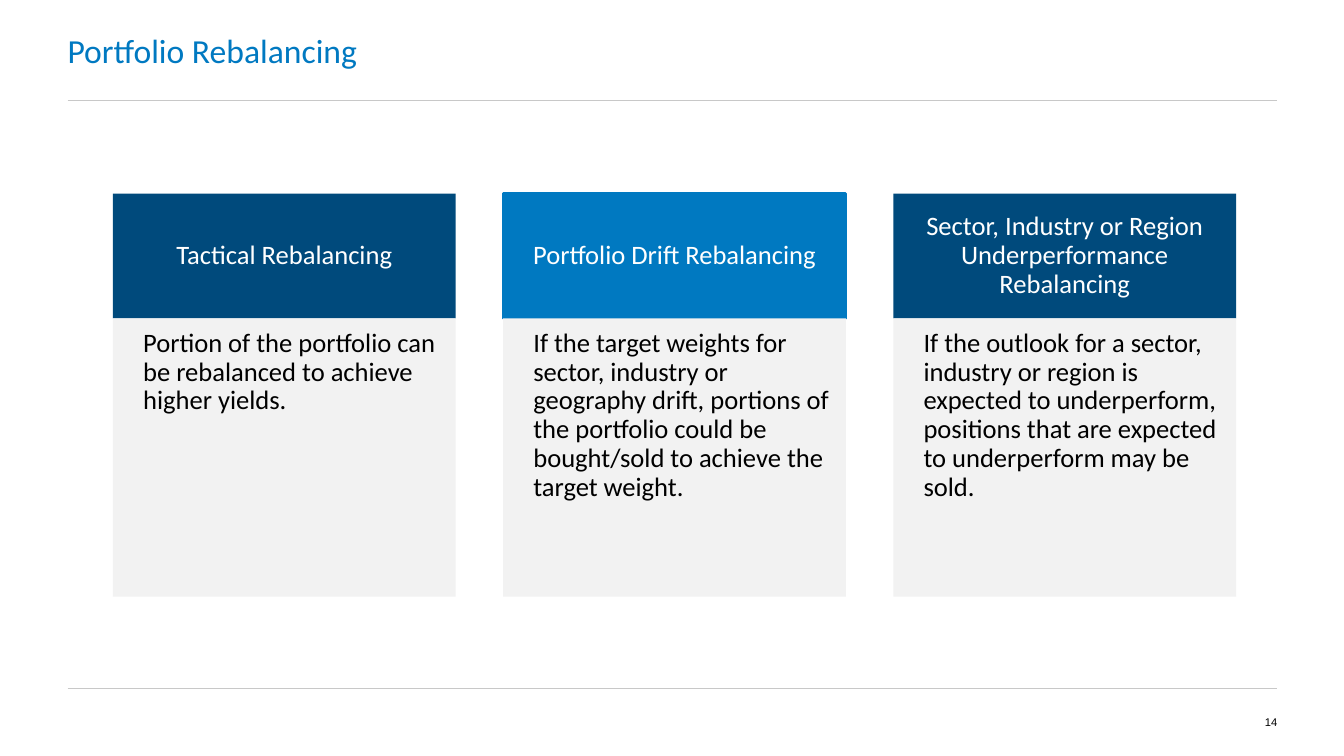
import pptx
import pptx.util
import pptx.dml.color
import pptx.enum.shapes
import pptx.enum.text
import pptx.oxml

PX = 9144
ALIGN = pptx.enum.text.PP_ALIGN
ANCHOR = pptx.enum.text.MSO_ANCHOR
NAVY, BLUE, PALE, GREY = "004A7C", "0079C1", "F2F2F2", "C8C8C8"
BLACK, WHITE = "000000", "FFFFFF"
LEFT, STEP, WIDE = 112, 387, 340
TOP, HEAD, BODY = 192, 124, 276
CARDS = [
    ("Tactical Rebalancing", NAVY, None,
     "Portion of the portfolio can be rebalanced to achieve higher yields."),
    ("Portfolio Drift Rebalancing", BLUE, BLUE,
     "If the target weights for sector, industry or geography drift, portions "
     "of the portfolio could be bought/sold to achieve the target weight."),
    ("Sector, Industry or Region Underperformance Rebalancing", NAVY, None,
     "If the outlook for a sector, industry or region is expected to "
     "underperform, positions that are expected to underperform may be sold."),
]


def px(*nums):
    return [pptx.util.Emu(num * PX) for num in nums]


def paint(part, color):
    part.solid()
    part.fore_color.rgb = pptx.dml.color.RGBColor.from_string(color)


def write(shape, text, size, color, align=ALIGN.LEFT, anchor=ANCHOR.MIDDLE,
          inset=(0, 0, 0, 0), face="Calibri"):
    frame = shape.text_frame
    frame.text = text
    frame.word_wrap = True
    frame.auto_size = pptx.enum.text.MSO_AUTO_SIZE.NONE
    frame.vertical_anchor = anchor
    (frame.margin_left, frame.margin_top,
     frame.margin_right, frame.margin_bottom) = px(*inset)
    para = frame.paragraphs[0]
    para.alignment = align
    para.font.name = face
    para.font.size = pptx.util.Pt(size)
    paint(para.font.fill, color)
    return para


def add_rule(slide, y):
    kind = pptx.enum.shapes.MSO_CONNECTOR.STRAIGHT
    rule = slide.shapes.add_connector(kind, *px(67, y, 1267, y))
    rule.line.width = pptx.util.Pt(0.75)
    paint(rule.line.fill, GREY)
    props = rule._element.spPr
    props.append(pptx.oxml.parse_xml(
        '<a:effectLst xmlns:a='
        '"http://schemas.openxmlformats.org/drawingml/2006/main"/>'))


def add_box(slide, x, y, high, fill, edge=None):
    kind = pptx.enum.shapes.MSO_SHAPE.RECTANGLE
    box = slide.shapes.add_shape(kind, *px(x, y, WIDE, high))
    box.shadow.inherit = False
    paint(box.fill, fill)
    if edge:
        box.line.width = pptx.util.Pt(2)
        paint(box.line.fill, edge)
    else:
        box.line.fill.background()
    return box


def add_card(slide, x, name, fill, edge, text):
    head = add_box(slide, x, TOP, HEAD, fill, edge)
    para = write(head, name, 19, WHITE, ALIGN.CENTER, inset=(15, 8, 15, 8))
    para.line_spacing = 0.9
    body = add_box(slide, x, TOP + HEAD, BODY, PALE)
    para = write(body, text, 19, BLACK, anchor=ANCHOR.TOP,
                 inset=(30, 11, 15, 17))
    para.line_spacing = 0.9


def add_title(slide, text):
    title = slide.shapes.title
    title.left, title.top, title.width, title.height = px(67, 0, 1200, 100)
    write(title, text, 24, BLUE)


def add_page(slide, text):
    box = slide.shapes.add_textbox(*px(1200, 683, 67, 67))
    write(box, text, 8, BLACK, ALIGN.RIGHT, face="Arial")


def main():
    deck = pptx.Presentation()
    deck.slide_width, deck.slide_height = px(1333, 750)
    slide = deck.slides.add_slide(deck.slide_layouts[5])
    add_title(slide, "Portfolio Rebalancing")
    for y in (683, 100):
        add_rule(slide, y)
    for num, card in enumerate(CARDS):
        add_card(slide, LEFT + num * STEP, *card)
    add_page(slide, "14")
    deck.save("out.pptx")


if __name__ == "__main__":
    main()
